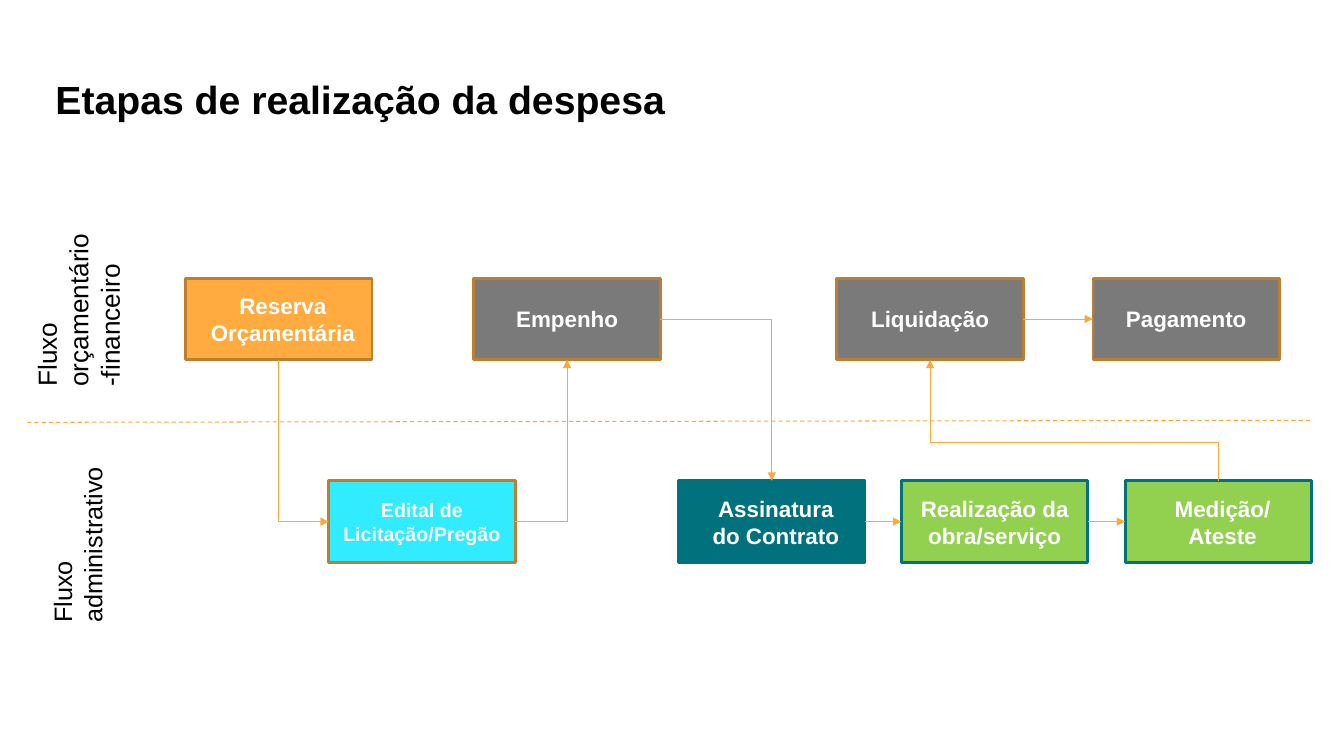
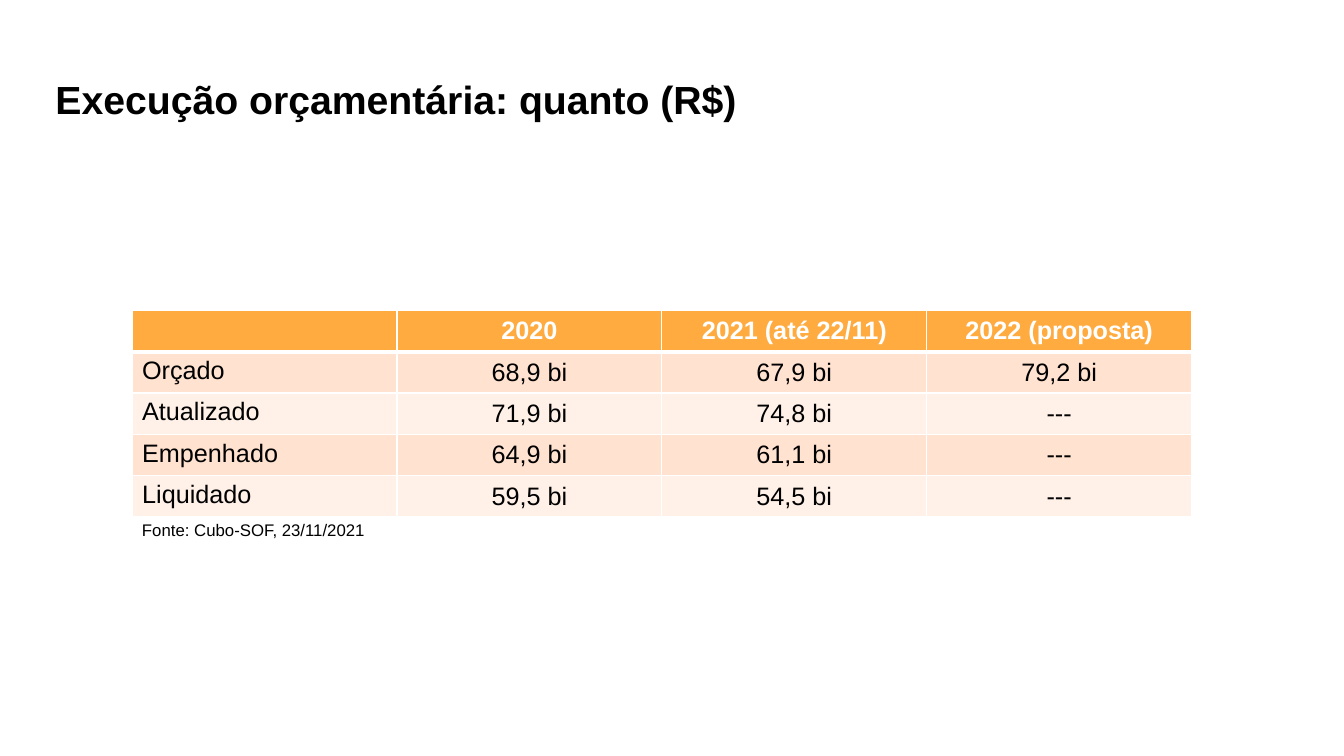
from lxml import etree
from pptx import Presentation
from pptx.dml.color import RGBColor
from pptx.enum import dml, shapes, text
from pptx.oxml import ns
from pptx.util import Inches, Pt

FONT = "Arial"
COLORS = {
    "black": "000000", "white": "FFFFFF", "orange": "FFAB40", "brown": "BD7F2F",
    "arrow": "FEA83A", "cyan": "31EBFF", "gray": "7A7A7A", "teal": "00717D",
    "green": "92D050", "peach": "FFE2CF", "cream": "FFF1E8",
}
TOP, LEFT, BOTTOM, RIGHT = range(4)  # connection sites of a rectangle
BOX_WIDTH, BOX_HEIGHT = 1.85, 0.81
BUDGET_ROW, ADMIN_ROW = 2.76, 4.77

# name: (left, top, fill, line, text size, text shift to the right, label)
STEPS = {
    "reserva": (1.84, BUDGET_ROW, "orange", "brown", 16, 0.04, "Reserva\vOrçamentária"),
    "edital": (3.26, ADMIN_ROW, "cyan", "brown", 14, 0, "Edital de\vLicitação/Pregão"),
    "empenho": (4.7, BUDGET_ROW, "gray", "brown", 16, 0, "Empenho"),
    "assinatura": (6.73, ADMIN_ROW, "teal", "teal", 16, 0.04, "Assinatura\vdo Contrato"),
    "realizacao": (8.94, ADMIN_ROW, "green", "teal", 16, 0, "Realização da\vobra/serviço"),
    "medicao": (11.16, ADMIN_ROW, "green", "teal", 16, 0.04, "Medição/\vAteste"),
    "liquidacao": (8.3, BUDGET_ROW, "gray", "brown", 16, 0, "Liquidação"),
    "pagamento": (10.84, BUDGET_ROW, "gray", "brown", 16, 0, "Pagamento"),
}
# start, its site, end, its site, preset shape
FLOWS = [
    ("reserva", BOTTOM, "edital", LEFT, "bentConnector2"),
    ("edital", RIGHT, "empenho", BOTTOM, "bentConnector2"),
    ("empenho", RIGHT, "assinatura", TOP, "bentConnector2"),
    ("assinatura", RIGHT, "realizacao", LEFT, "straightConnector1"),
    ("realizacao", RIGHT, "medicao", LEFT, "straightConnector1"),
    ("medicao", TOP, "liquidacao", BOTTOM, "bentConnector3"),
    ("liquidacao", RIGHT, "pagamento", LEFT, "straightConnector1"),
]
BEND = 31800  # where the three-part connector turns, in 1/100000 of its length

BUDGET = [
    ["", "2020", "2021 (até 22/11)", "2022 (proposta)"],
    ["Orçado", "68,9 bi", "67,9 bi", "79,2 bi"],
    ["Atualizado", "71,9 bi", "74,8 bi", "---"],
    ["Empenhado", "64,9 bi", "61,1 bi", "---"],
    ["Liquidado", "59,5 bi", "54,5 bi", "---"],
]


def color(name):
    return RGBColor.from_string(COLORS[name])


def inches(*lengths):
    return [Inches(length) for length in lengths]


def format_text(frame, size, ink="black", bold=False, align=None):
    for para in frame.paragraphs:
        para.alignment = align
        for span in para.runs:
            span.font.name = FONT
            span.font.size = Pt(size)
            span.font.bold = bold
            span.font.color.rgb = color(ink)


def add_page(deck, title):
    """Add a title-only slide with the shared title style."""
    page = deck.slides.add_slide(deck.slide_layouts[5])
    holder = page.shapes.title
    holder.left, holder.top, holder.width, holder.height = inches(0.45, 0.65, 12.42, 0.84)
    frame = holder.text_frame
    frame.text = title
    frame.auto_size = text.MSO_AUTO_SIZE.NONE
    frame.vertical_anchor = text.MSO_ANCHOR.TOP
    frame.margin_left = frame.margin_right = Inches(0.1)
    frame.margin_top = frame.margin_bottom = Inches(0.1)
    format_text(frame, 28, bold=True, align=text.PP_ALIGN.LEFT)
    return page


def add_note(page, left, top, width, height, words, size, rotation=0):
    box = page.shapes.add_textbox(*inches(left, top, width, height))
    box.rotation = rotation
    box.text_frame.word_wrap = True
    box.text_frame.text = words
    format_text(box.text_frame, size)


def add_step(page, left, top, fill, line, size, shift, label):
    box = page.shapes.add_shape(
        shapes.MSO_SHAPE.RECTANGLE, *inches(left, top, BOX_WIDTH, BOX_HEIGHT))
    box.shadow.inherit = False
    box.fill.solid()
    box.fill.fore_color.rgb = color(fill)
    box.line.color.rgb = color(line)
    box.line.width = Pt(2)
    frame = box.text_frame
    frame.word_wrap = True
    frame.margin_left, frame.margin_right = inches(0.04 + shift, 0.04 - shift)
    frame.vertical_anchor = text.MSO_ANCHOR.MIDDLE
    frame.text = label
    format_text(frame, size, "white", True, text.PP_ALIGN.CENTER)
    return box


def add_line(page, *ends):
    line = page.shapes.add_connector(shapes.MSO_CONNECTOR.STRAIGHT, *ends)
    line.line.color.rgb = color("arrow")
    line.line.width = Pt(0.75)
    etree.SubElement(line._element.spPr, ns.qn("a:effectLst"))
    return line


def bend(arrow, preset, vertical_first):
    """Turn a straight connector into an elbow between the same two ends."""
    goes_left = arrow.end_x < arrow.begin_x
    goes_up = arrow.end_y < arrow.begin_y
    properties = arrow._element.spPr
    frame = properties.find(ns.qn("a:xfrm"))
    flip_h, flip_v = goes_left, goes_up
    if vertical_first:
        center_x = arrow.left + arrow.width // 2
        center_y = arrow.top + arrow.height // 2
        arrow.width, arrow.height = arrow.height, arrow.width
        arrow.left = center_x - arrow.width // 2
        arrow.top = center_y - arrow.height // 2
        frame.set("rot", str(270 * 60000))
        flip_h, flip_v = not goes_up, goes_left
    frame.set("flipH", str(int(flip_h)))
    frame.set("flipV", str(int(flip_v)))
    geometry = properties.find(ns.qn("a:prstGeom"))
    geometry.set("prst", preset)
    if preset == "bentConnector3":
        guides = geometry.find(ns.qn("a:avLst"))
        etree.SubElement(guides, ns.qn("a:gd"), name="adj1", fmla=f"val {BEND}")


def add_flow(page, start, start_site, end, end_site, preset):
    arrow = add_line(page, 0, 0, 0, 0)
    arrow.begin_connect(start, start_site)
    arrow.end_connect(end, end_site)
    etree.SubElement(arrow.line._get_or_add_ln(), ns.qn("a:tailEnd"), type="triangle")
    if preset.startswith("bent"):
        bend(arrow, preset, start_site in (TOP, BOTTOM))


def build_flow_page(deck):
    page = add_page(deck, "Etapas de realização da despesa")
    add_note(page, -0.12, 2.52, 1.79, 1.04, "Fluxo orçamentário -financeiro", 18.7, 270)
    add_note(page, -0.12, 5.02, 1.79, 0.72, "Fluxo administrativo", 18, 270)
    divider = add_line(page, *inches(0.27, 4.19, 13, 4.17))
    divider.line.dash_style = dml.MSO_LINE.DASH
    boxes = {name: add_step(page, *step) for name, step in STEPS.items()}
    for start, start_site, end, end_site, preset in FLOWS:
        add_flow(page, boxes[start], start_site, boxes[end], end_site, preset)


def set_borders(cell, top, bottom):
    """Draw white cell borders; top and bottom are widths in points."""
    properties = cell._tc.get_or_add_tcPr()
    widths = {"a:lnL": 1, "a:lnR": 1, "a:lnT": top, "a:lnB": bottom}
    for index, (side, width) in enumerate(widths.items()):
        line = etree.Element(ns.qn(side), w=str(Pt(width)))
        paint = etree.SubElement(line, ns.qn("a:solidFill"))
        etree.SubElement(paint, ns.qn("a:srgbClr"), val=COLORS["white"])
        properties.insert(index, line)


def add_budget_table(page, left, top, width, row_height):
    rows, columns = len(BUDGET), len(BUDGET[0])
    table = page.shapes.add_table(
        rows, columns, *inches(left, top, width, row_height * rows)).table
    for row, values in enumerate(BUDGET):
        header = row == 0
        fill = "orange" if header else ("cream", "peach")[row % 2]
        for column, value in enumerate(values):
            cell = table.cell(row, column)
            cell.fill.solid()
            cell.fill.fore_color.rgb = color(fill)
            set_borders(cell, 3 if row == 1 else 1, 3 if header else 1)
            cell.text_frame.text = value
            align = text.PP_ALIGN.LEFT
            if column:
                align = text.PP_ALIGN.CENTER
                cell.vertical_anchor = text.MSO_ANCHOR.MIDDLE
            format_text(cell.text_frame, 18, "white" if header else "black", header, align)


def build_budget_page(deck):
    page = add_page(deck, "Execução orçamentária: quanto (R$)")
    add_budget_table(page, 1.31, 3.08, 10.51, 0.41)
    add_note(page, 1.31, 5.11, 2.62, 0.3, "Fonte: Cubo-SOF, 23/11/2021", 12)


def main():
    deck = Presentation()
    deck.slide_width, deck.slide_height = inches(13.33, 7.5)
    build_flow_page(deck)
    build_budget_page(deck)
    deck.save("out.pptx")


if __name__ == "__main__":
    main()
